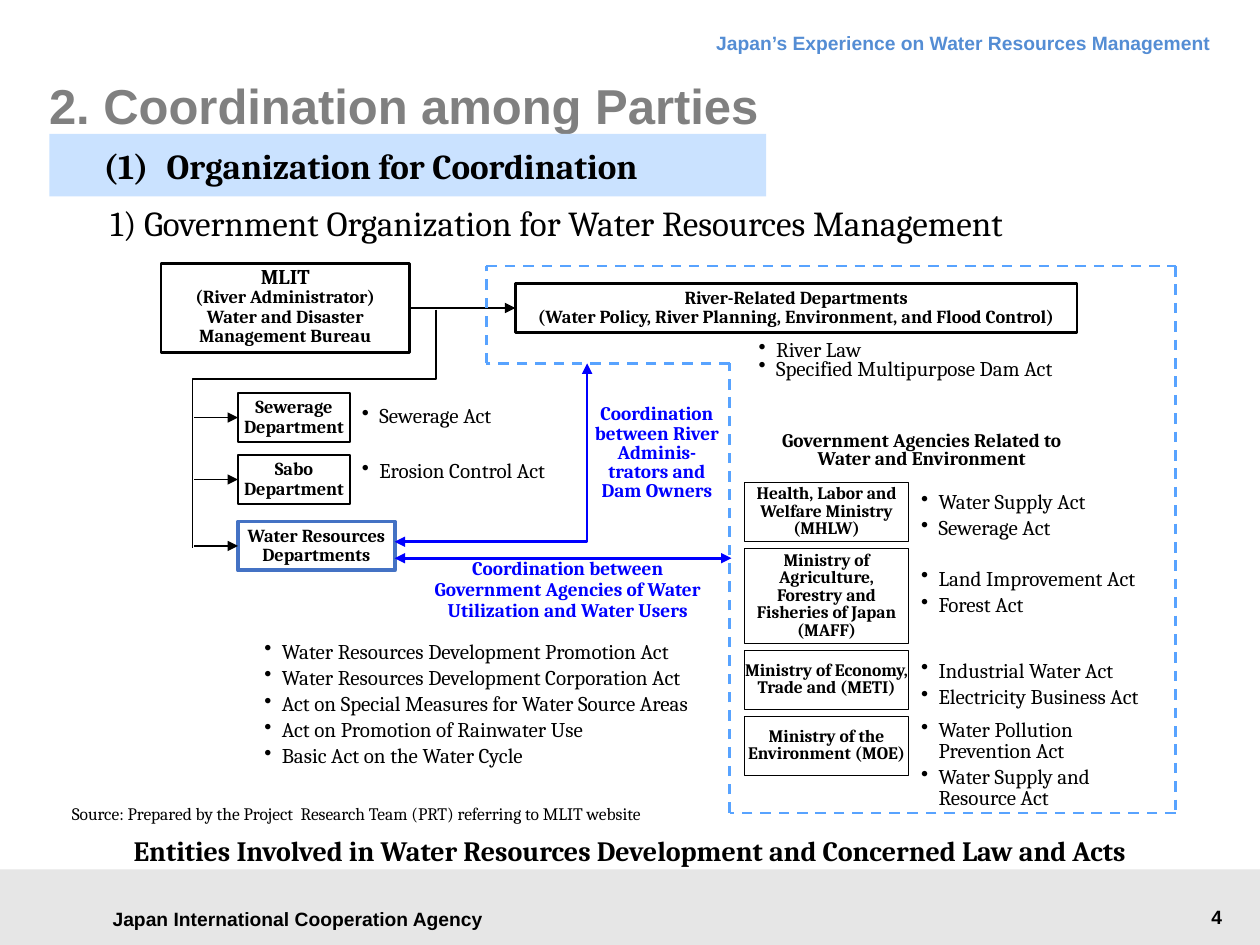
from dataclasses import dataclass
from itertools import pairwise
from typing import NamedTuple

from pptx import Presentation
from pptx import util as u
from pptx.dml.color import RGBColor
from pptx.enum import dml, shapes, text
from pptx.oxml import ns, xmlchemy

Pt = u.Pt
LEFT, CENTER, RIGHT = text.PP_ALIGN.LEFT, text.PP_ALIGN.CENTER, text.PP_ALIGN.RIGHT
TOP, MIDDLE, BOTTOM = (text.MSO_ANCHOR.TOP, text.MSO_ANCHOR.MIDDLE,
                       text.MSO_ANCHOR.BOTTOM)
SIDE_LEFT, SIDE_RIGHT = 1, 3


@dataclass(frozen=True)
class Theme:
    sans: str = "Arial"
    serif: str = "Cambria"
    black: str = "000000"
    white: str = "FFFFFF"
    gray: str = "808080"
    band: str = "E6E6E6"
    header: str = "548DD4"
    bar: str = "CAE2FF"
    accent: str = "4472C4"
    link: str = "0000FF"
    boundary: str = "58A3FF"
    title: float = 28
    heading: float = 20
    caption: float = 16
    body: float = 12
    label: float = 11
    box: float = 10.5
    small: float = 10


THEME = Theme()


class Area(NamedTuple):
    left: float
    top: float
    width: float
    height: float


class Style(NamedTuple):
    size: float = THEME.body
    bold: bool = False
    color: str = THEME.black
    font: str = THEME.serif
    align: text.PP_ALIGN = LEFT
    anchor: text.MSO_ANCHOR = TOP
    spacing: float | None = None
    after: float = 0
    bullet: bool = False
    insets: tuple = (0, 0, 0, 0)


class Agency(NamedTuple):
    name: str
    height: float
    acts: list
    acts_top: float


PADDED = (7.2, 3.6, 7.2, 3.6)
BOX = Style(THEME.box, True, align=CENTER, anchor=MIDDLE, spacing=11)
AGENCY = BOX._replace(size=THEME.small, spacing=10)
LABEL = Style(THEME.label, True, align=CENTER, spacing=10.5)
LINK_LABEL = LABEL._replace(color=THEME.link, spacing=11)
ACTS = Style(spacing=12, after=3, bullet=True)
TIGHT_ACTS = Style(spacing=10.5, bullet=True)
FOOTER = Style(THEME.label, True, font=THEME.sans, insets=PADDED)


def rgb(value: str) -> RGBColor:
    return RGBColor.from_string(value)


def write(shape, lines: list, style: Style) -> None:
    """Fill a shape with one paragraph per line; a line may be (words, size, spacing)."""
    frame = shape.text_frame
    frame.word_wrap = True
    frame.auto_size = text.MSO_AUTO_SIZE.NONE
    frame.vertical_anchor = style.anchor
    (frame.margin_left, frame.margin_top,
     frame.margin_right, frame.margin_bottom) = map(Pt, style.insets)
    for index, line in enumerate(lines):
        words, size, spacing = (
            line if isinstance(line, tuple) else (line, style.size, style.spacing))
        paragraph = frame.add_paragraph() if index else frame.paragraphs[0]
        paragraph.alignment = style.align
        paragraph.space_before = Pt(0)
        paragraph.space_after = Pt(style.after)
        if spacing:
            paragraph.line_spacing = Pt(spacing)
        if style.bullet:
            properties = paragraph._p.get_or_add_pPr()
            properties.set("marL", str(Pt(10)))
            properties.set("indent", str(-Pt(10)))
            add_element(properties, "a:buChar", char="•")
        run = paragraph.add_run()
        run.text = words
        run.font.name, run.font.size, run.font.bold = style.font, Pt(size), style.bold
        run.font.color.rgb = rgb(style.color)


def add_element(parent, tag: str, **attributes: str) -> None:
    element = xmlchemy.OxmlElement(tag)
    for name, value in attributes.items():
        element.set(name, value)
    parent.append(element)


def add_text(slide, area: Area, lines: list, style: Style):
    shape = slide.shapes.add_textbox(*map(Pt, area))
    write(shape, lines, style)
    return shape


def add_box(slide, area: Area, lines: list, style: Style, fill: str = THEME.white,
            line: str | None = THEME.black, weight: float = 0.75):
    shape = slide.shapes.add_shape(shapes.MSO_SHAPE.RECTANGLE, *map(Pt, area))
    shape.shadow.inherit = False
    shape.fill.solid()
    shape.fill.fore_color.rgb = rgb(fill)
    if line:
        shape.line.color.rgb = rgb(line)
        shape.line.width = Pt(weight)
    else:
        shape.line.fill.background()
    write(shape, lines, style)
    return shape


def add_line(slide, start: tuple, end: tuple, color: str = THEME.black,
             weight: float = 0.75, arrows: tuple = (), dashed: bool = False,
             bend: float | None = None, quarter_turn: bool = False):
    """Draw a connector; bend is the elbow position as a share of its length."""
    kind = shapes.MSO_CONNECTOR.STRAIGHT if bend is None else shapes.MSO_CONNECTOR.ELBOW
    connector = slide.shapes.add_connector(kind, *map(Pt, (*start, *end)))
    connector.line.color.rgb = rgb(color)
    connector.line.width = Pt(weight)
    if dashed:
        connector.line.dash_style = dml.MSO_LINE.DASH
    properties = connector._element.spPr
    for arrow in arrows:
        add_element(properties.get_or_add_ln(), f"a:{arrow}", type="triangle")
    add_element(properties, "a:effectLst")
    if bend is not None:
        guides = properties.find(ns.qn("a:prstGeom")).get_or_add_avLst()
        add_element(guides, "a:gd", name="adj1", fmla=f"val {round(bend * 100000)}")
    if quarter_turn:
        properties.find(ns.qn("a:xfrm")).set("rot", "5400000")
    return connector


def add_frame(slide) -> None:
    """Running header, footer, title and headings."""
    add_box(slide, Area(0, 496.8, 720, 43.2), [], FOOTER, THEME.band, None)
    add_text(slide, Area(51, 512.6, 238.5, 24.5), ["Japan International Cooperation Agency"],
             FOOTER._replace(align=CENTER, anchor=MIDDLE))
    add_text(slide, Area(196, 9.4, 503, 27), ["Japan’s Experience on Water Resources Management"],
             FOOTER._replace(color=THEME.header, align=RIGHT, spacing=18))
    add_text(slide, Area(592.5, 514, 113, 21), ["4"], FOOTER._replace(align=RIGHT))
    title = slide.shapes.title
    title.left, title.top, title.width, title.height = map(Pt, (28, 20, 648, 57))
    write(title, ["2. Coordination among Parties"],
          Style(THEME.title, True, THEME.gray, THEME.sans, anchor=BOTTOM))
    add_box(slide, Area(28.3, 76.5, 409.5, 35.8), ["(1)\tOrganization for Coordination"],
            Style(THEME.heading, True, anchor=MIDDLE, insets=(31, 5.7, 10, 5.7)),
            THEME.bar, None)
    add_text(slide, Area(56, 111.6, 582, 32),
             ["1) Government Organization for Water Resources Management"],
             Style(THEME.heading, insets=PADDED))
    add_text(slide, Area(34, 455, 360, 19.5),
             ["Source: Prepared by the Project  Research Team (PRT) referring to MLIT website"],
             Style(THEME.small, anchor=MIDDLE, insets=PADDED))
    add_text(slide, Area(0, 479.5, 720, 16),
             ["Entities Involved in Water Resources Development and Concerned Law and Acts"],
             Style(THEME.caption, True, align=CENTER, spacing=16))


def add_bureau(slide) -> None:
    """Ministry bureau, its departments and the lines between them."""
    bureau = add_box(slide, Area(92, 150.5, 142, 51),
                     [("MLIT", THEME.body, 10.5), "(River Administrator)",
                      "Water and Disaster Management Bureau"], BOX, weight=1.5)
    river = add_box(slide, Area(294.5, 162, 321, 28),
                    ["River-Related Departments",
                     "(Water Policy, River Planning, Environment, and Flood Control)"],
                    BOX, weight=1.5)
    link = add_line(slide, (234, 176), (294.5, 176), weight=1, arrows=("tailEnd",))
    link.begin_connect(bureau, SIDE_RIGHT)
    link.end_connect(river, SIDE_LEFT)
    add_line(slide, (111.5, 175.5), (247.5, 314.5), weight=1, bend=0.29, quarter_turn=True)
    departments = [("Sewerage Department", 224.6, 64, THEME.black, 0.75),
                   ("Sabo Department", 260, 64, THEME.black, 0.75),
                   ("Water Resources Departments", 298, 89.5, THEME.accent, 2.25)]
    for name, top, width, color, weight in departments:
        box = add_box(slide, Area(136, top, width, 28), [name], BOX, line=color, weight=weight)
        branch = add_line(slide, (111, top + 14), (136, top + 14), arrows=("tailEnd",))
        branch.end_connect(box, SIDE_LEFT)
    for act, top in (("Sewerage Act", 234), ("Erosion Control Act", 265.5)):
        add_text(slide, Area(206.8, top, 110, 10.5), [act], TIGHT_ACTS)
    add_text(slide, Area(433.5, 196.5, 177, 22),
             ["River Law", "Specified Multipurpose Dam Act"], TIGHT_ACTS)
    add_text(slide, Area(151, 367, 254, 73),
             ["Water Resources Development Promotion Act",
              "Water Resources Development Corporation Act",
              "Act on Special Measures for Water Source Areas",
              "Act on Promotion of Rainwater Use", "Basic Act on the Water Cycle"], ACTS)


def add_agencies(slide) -> None:
    """Column of related ministries with their acts."""
    add_text(slide, Area(443, 247.5, 167.5, 22),
             ["Government Agencies Related to Water and Environment"], LABEL)
    agencies = [
        Agency("Health, Labor and Welfare Ministry (MHLW)", 33.8,
               ["Water Supply Act", "Sewerage Act"], 281.5),
        Agency("Ministry of Agriculture, Forestry and Fisheries of Japan (MAFF)", 54,
               ["Land Improvement Act", "Forest Act"], 325.4),
        Agency("Ministry of Economy, Trade and (METI)", 33.8,
               ["Industrial Water Act", "Electricity Business Act"], 378),
        Agency("Ministry of the Environment (MOE)", 33.8,
               ["Water Pollution Prevention Act", "Water Supply and Resource Act"], 411.8)]
    top, gap = 275.8, 4
    for agency in agencies:
        add_box(slide, Area(425.5, top, 93.6, agency.height), [agency.name], AGENCY)
        add_text(slide, Area(526.3, agency.acts_top, 130.3, 27), agency.acts, ACTS)
        top += agency.height + gap


def add_coordination(slide) -> None:
    """Dashed boundary and two-way coordination links."""
    corners = [(278, 152), (671.8, 152), (671.8, 464.5), (417, 464.5), (417, 207.7),
               (278, 207.7), (278, 152)]
    for start, end in pairwise(corners):
        add_line(slide, start, end, THEME.boundary, 1.5, dashed=True)
    both = ("headEnd", "tailEnd")
    add_line(slide, (225.5, 309.6), (335.5, 207.7), THEME.link, 1.5, both, bend=1)
    add_line(slide, (225.5, 319), (418, 319), THEME.link, 1.5, both)
    add_text(slide, Area(339.8, 231.8, 71.3, 67),
             ["Coordination between River Adminis-trators and Dam Owners"], LINK_LABEL)
    add_text(slide, Area(241, 319, 167, 36),
             ["Coordination between Government Agencies of Water Utilization and Water Users"],
             LINK_LABEL._replace(spacing=12))


def main() -> None:
    presentation = Presentation()
    presentation.slide_width, presentation.slide_height = Pt(720), Pt(540)
    slide = presentation.slides.add_slide(presentation.slide_layouts[5])
    for add_part in (add_frame, add_bureau, add_agencies, add_coordination):
        add_part(slide)
    presentation.save("out.pptx")


if __name__ == "__main__":
    main()
